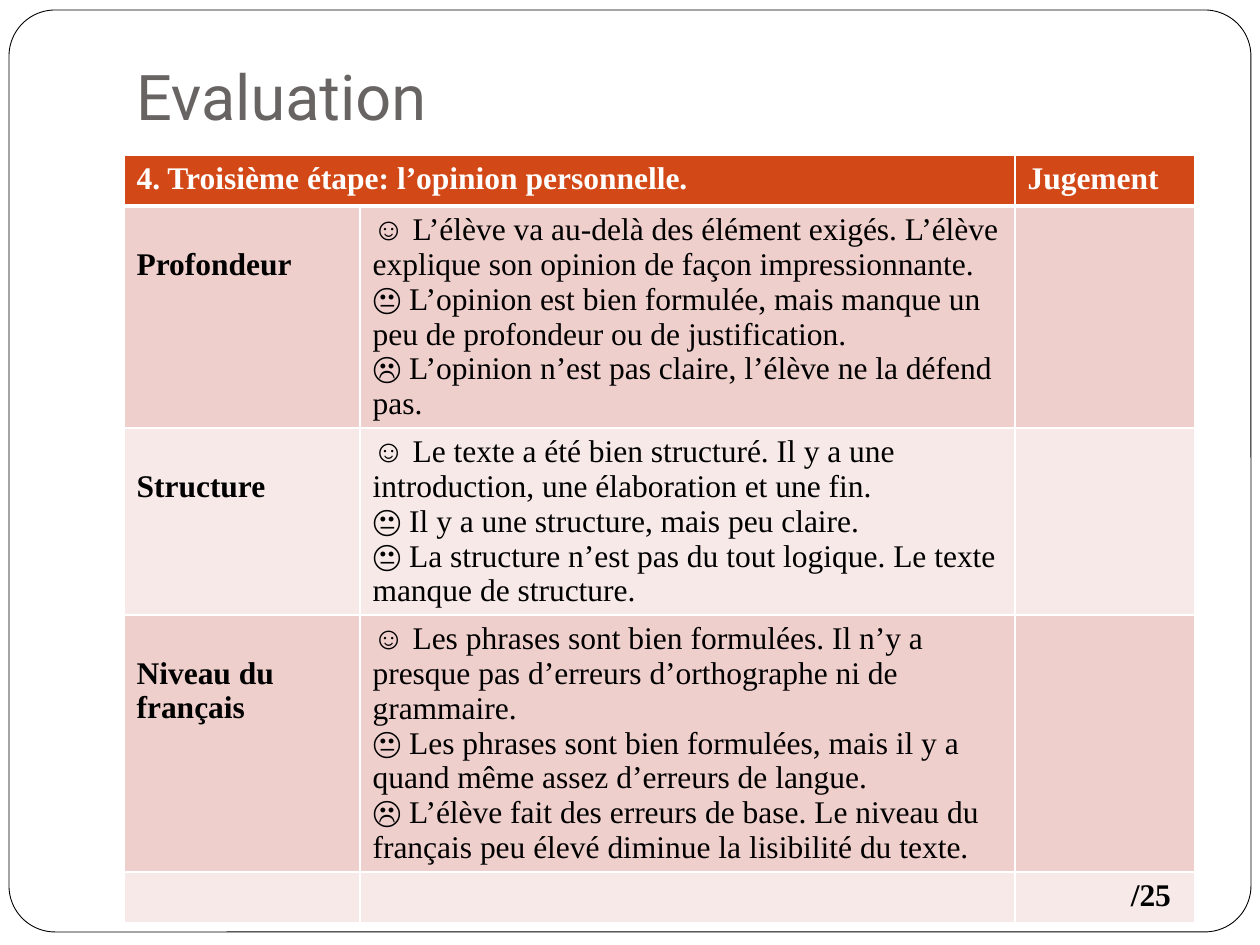
from lxml.etree import SubElement
from pptx import Presentation
from pptx.dml.color import RGBColor
from pptx.enum.shapes import MSO_SHAPE as Shape
from pptx.enum.text import MSO_ANCHOR as Anchor, PP_ALIGN as Align
from pptx.oxml.ns import qn
from pptx.util import Emu, Pt

TITLE = "Evaluation"
HEADINGS = ("4. Troisième étape: l’opinion personnelle.", "Jugement")
# Each criterion has a name and its levels, each opened by a face.
CRITERIA = [
    ("Profondeur", [
        "☺ L’élève va au-delà des élément exigés. L’élève explique son opinion "
        "de façon impressionnante.",
        "😐 L’opinion est bien formulée, mais manque un peu de profondeur ou de "
        "justification.",
        "☹ L’opinion n’est pas claire, l’élève ne la défend pas.",
    ]),
    ("Structure", [
        "☺ Le texte a été bien structuré. Il y a une introduction, une "
        "élaboration et une fin.",
        "😐 Il y a une structure, mais peu claire.",
        "😐 La structure n’est pas du tout logique. Le texte manque de structure.",
    ]),
    ("Niveau du français", [
        "☺ Les phrases sont bien formulées. Il n’y a presque pas d’erreurs "
        "d’orthographe ni de grammaire.",
        "😐 Les phrases sont bien formulées, mais il y a quand même assez "
        "d’erreurs de langue.",
        "☹ L’élève fait des erreurs de base. Le niveau du français peu élevé "
        "diminue la lisibilité du texte.",
    ]),
]
TOTAL = "/25"

COLUMN_WIDTHS = (236, 655, 180)
ROW_HEIGHTS = (51, 222, 187, 256, 51)
LEFT, TABLE_TOP = 124, 155
LABEL_TOP, TOTAL_RIGHT = 41, 24
HEADER_FILL, BAND_FILLS = "D34817", ("EFCFCC", "F7E9E8")
WHITE, BLACK, GREY = "FFFFFF", "000000", "696464"
TITLE_FONT, TABLE_FONT = "Roboto", "Times New Roman"


def px(length):
    return Emu(round(length * 914400 / 126))


def rgb(value):
    return RGBColor.from_string(value)


def write(paragraph, text, **values):
    run = paragraph.add_run()
    run.text = text
    color = values.pop("color", BLACK)
    for name, value in {"name": TABLE_FONT, "size": Pt(18), "bold": False, **values}.items():
        setattr(run.font, name, value)
    run.font.color.rgb = rgb(color)


def set_borders(cell, bottom_width):
    properties = cell._tc.get_or_add_tcPr()
    widths = {"a:lnL": 1, "a:lnR": 1, "a:lnT": 1, "a:lnB": bottom_width}
    for index, (side, width) in enumerate(widths.items()):
        line = SubElement(properties, qn(side), w=str(Pt(width)))
        fill = SubElement(line, qn("a:solidFill"))
        SubElement(fill, qn("a:srgbClr"), val=WHITE)
        properties.insert(index, line)


def add_frame(slide):
    frame = slide.shapes.add_shape(Shape.ROUNDED_RECTANGLE, px(9), px(10), px(1242), px(922))
    frame.adjustments[0] = 0.05
    frame.shadow.inherit = False
    frame.fill.solid()
    frame.fill.fore_color.rgb = rgb(WHITE)
    frame.line.color.rgb = rgb(BLACK)
    frame.line.width = Pt(0.5)
    slide.shapes._spTree.insert(2, frame._element)  # behind the title


def add_title(slide):
    title = slide.shapes.title
    box = {"left": LEFT, "top": 65, "width": sum(COLUMN_WIDTHS), "height": 81}
    for name, value in box.items():
        setattr(title, name, px(value))
    frame = title.text_frame
    margins = {"margin_left": 12, "margin_top": 6, "margin_right": 12, "margin_bottom": 13}
    for name, value in margins.items():
        setattr(frame, name, px(value))
    frame.vertical_anchor = Anchor.BOTTOM
    paragraph = frame.paragraphs[0]
    paragraph.alignment = Align.LEFT
    write(paragraph, TITLE, name=TITLE_FONT, size=Pt(36), color=GREY)


def add_rubric(slide):
    table = slide.shapes.add_table(
        len(ROW_HEIGHTS), len(COLUMN_WIDTHS), px(LEFT), px(TABLE_TOP),
        px(sum(COLUMN_WIDTHS)), px(sum(ROW_HEIGHTS))).table
    for column, width in zip(table.columns, COLUMN_WIDTHS):
        column.width = px(width)
    for index, (row, height) in enumerate(zip(table.rows, ROW_HEIGHTS)):
        row.height = px(height)
        for cell in row.cells:
            cell.fill.solid()
            cell.fill.fore_color.rgb = rgb(BAND_FILLS[(index - 1) % 2] if index else HEADER_FILL)
            set_borders(cell, 1 if index else 3)
            cell.text_frame.paragraphs[0].font.size = Pt(18)

    table.cell(0, 0).merge(table.cell(0, 1))
    for column, heading in zip((0, 2), HEADINGS):
        write(table.cell(0, column).text_frame.paragraphs[0], heading, bold=True, color=WHITE)

    for row, (name, levels) in enumerate(CRITERIA, start=1):
        label = table.cell(row, 0)
        label.margin_top = px(LABEL_TOP)
        write(label.text_frame.paragraphs[0], name, bold=True)
        frame = table.cell(row, 1).text_frame
        for index, level in enumerate(levels):
            paragraph = frame.add_paragraph() if index else frame.paragraphs[0]
            write(paragraph, level)

    total = table.cell(len(ROW_HEIGHTS) - 1, 2)
    total.margin_right = px(TOTAL_RIGHT)
    paragraph = total.text_frame.paragraphs[0]
    paragraph.alignment = Align.RIGHT
    write(paragraph, TOTAL, bold=True)


def main():
    presentation = Presentation()
    presentation.slide_width, presentation.slide_height = px(1260), px(945)
    slide = presentation.slides.add_slide(presentation.slide_layouts[5])
    add_frame(slide)
    add_title(slide)
    add_rubric(slide)
    presentation.save("out.pptx")


if __name__ == "__main__":
    main()
